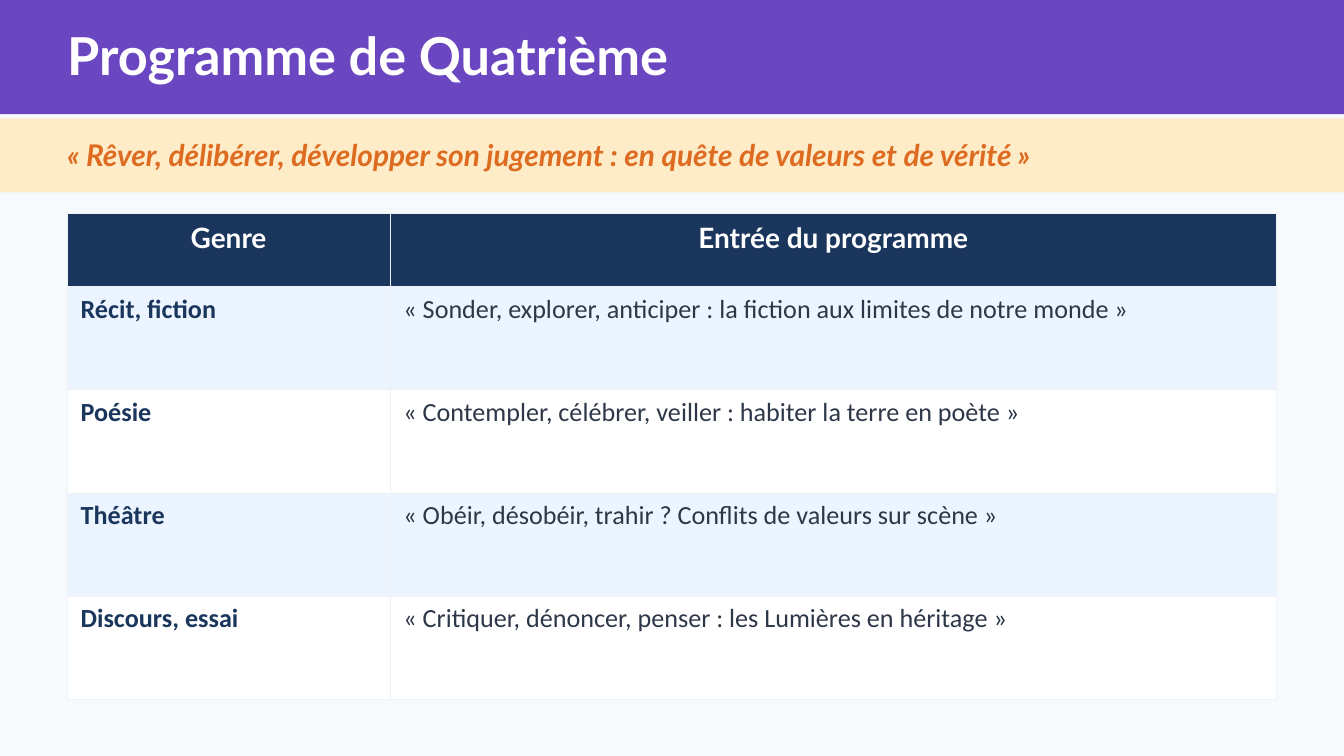
"""Build the slide that presents the Quatrième programme."""
import pptx
import pptx.dml.color
import pptx.enum.shapes
import pptx.enum.text
import pptx.oxml
import pptx.oxml.ns
import pptx.util

Cm = pptx.util.Cm
Pt = pptx.util.Pt
RGBColor = pptx.dml.color.RGBColor
Align = pptx.enum.text.PP_ALIGN

PAPER = RGBColor(0xF7, 0xFA, 0xFC)
PURPLE = RGBColor(0x6B, 0x46, 0xC1)
CREAM = RGBColor(0xFE, 0xEB, 0xC8)
ORANGE = RGBColor(0xDD, 0x6B, 0x20)
NAVY = RGBColor(0x1A, 0x36, 0x5D)
SLATE = RGBColor(0x2D, 0x37, 0x48)
PALE = RGBColor(0xEB, 0xF4, 0xFF)
WHITE = RGBColor(0xFF, 0xFF, 0xFF)
BORDER = RGBColor(0xED, 0xF2, 0xF7)

WIDTH = 25.4
LEFT = 1.27
INNER = WIDTH - 2 * LEFT

HEADS = ("Genre", "Entrée du programme")
ROWS = (
    ("Récit, fiction", "« Sonder, explorer, anticiper : la fiction aux limites de notre monde »"),
    ("Poésie", "« Contempler, célébrer, veiller : habiter la terre en poète »"),
    ("Théâtre", "« Obéir, désobéir, trahir ? Conflits de valeurs sur scène »"),
    ("Discours, essai", "« Critiquer, dénoncer, penser : les Lumières en héritage »"),
)


class Deck:
    """Hold the style and the current slide."""

    head = "Lato"
    body = "Calibri"

    def __init__(self):
        self.show = pptx.Presentation()
        self.show.slide_width = Cm(WIDTH)
        self.show.slide_height = Cm(14.29)
        self.slide = self.show.slides.add_slide(self.show.slide_layouts[5])
        fill = self.slide.background.fill
        fill.solid()
        fill.fore_color.rgb = PAPER

    def text(self, frame, words, size, color, font, bold=True, italic=False, align=Align.LEFT):
        para = frame.paragraphs[0]
        para.alignment = align
        run = para.add_run()
        run.text = words
        run.font.name = font
        run.font.size = Pt(size)
        run.font.bold = bold
        run.font.italic = italic
        run.font.color.rgb = color

    def band(self, top, height, color):
        kind = pptx.enum.shapes.MSO_SHAPE.RECTANGLE
        shape = self.slide.shapes.add_shape(kind, 0, Cm(top), Cm(WIDTH), Cm(height))
        shape.shadow.inherit = False
        shape.fill.solid()
        shape.fill.fore_color.rgb = color
        shape.line.fill.background()

    def frame(self, shape):
        frame = shape.text_frame
        frame.word_wrap = True
        frame.auto_size = pptx.enum.text.MSO_AUTO_SIZE.NONE
        frame.vertical_anchor = pptx.enum.text.MSO_ANCHOR.MIDDLE
        frame.margin_left = frame.margin_right = 0
        frame.margin_top = frame.margin_bottom = 0
        return frame

    def title(self, words, top, height):
        shape = self.slide.shapes.title
        shape.left, shape.top = Cm(LEFT), Cm(top)
        shape.width, shape.height = Cm(INNER), Cm(height)
        self.slide.shapes._spTree.append(shape._element)
        self.text(self.frame(shape), words, 28, WHITE, self.head)

    def quote(self, words, top, height):
        shape = self.slide.shapes.add_textbox(Cm(LEFT), Cm(top), Cm(INNER), Cm(height))
        self.text(self.frame(shape), words, 16, ORANGE, self.head, italic=True)

    def cell(self, cell, fill):
        props = cell._tc.get_or_add_tcPr()
        for side in ("lnL", "lnR", "lnT", "lnB"):
            props.append(pptx.oxml.parse_xml(
                f'<a:{side} {pptx.oxml.ns.nsdecls("a")} w="{Pt(0.5)}">'
                f'<a:solidFill><a:srgbClr val="{BORDER}"/></a:solidFill></a:{side}>'
            ))
        cell.fill.solid()
        cell.fill.fore_color.rgb = fill
        return cell.text_frame

    def table(self, heads, rows, top, widths, first, other):
        high = first + other * len(rows)
        table = self.slide.shapes.add_table(
            len(rows) + 1, len(heads), Cm(LEFT), Cm(top), Cm(INNER), Cm(high)
        ).table
        for col, width in zip(table.columns, widths):
            col.width = Cm(width)
        for num, row in enumerate(table.rows):
            row.height = Cm(other if num else first)
        for col, words in enumerate(heads):
            frame = self.cell(table.cell(0, col), NAVY)
            self.text(frame, words, 15, WHITE, self.head, align=Align.CENTER)
        for num, row in enumerate(rows, 1):
            for col, words in enumerate(row):
                frame = self.cell(table.cell(num, col), PALE if num % 2 else WHITE)
                color = SLATE if col else NAVY
                self.text(frame, words, 14, color, self.body, bold=col == 0)


def main():
    deck = Deck()
    deck.band(0, 2.16, PURPLE)
    deck.title("Programme de Quatrième", 0.25, 1.57)
    deck.band(2.24, 1.4, CREAM)
    deck.quote("« Rêver, délibérer, développer son jugement : en quête de valeurs et de vérité »", 2.31, 1.22)
    deck.table(HEADS, ROWS, 4.04, (6.1, 16.76), 1.38, 1.95)
    deck.show.save("out.pptx")


if __name__ == "__main__":
    main()
